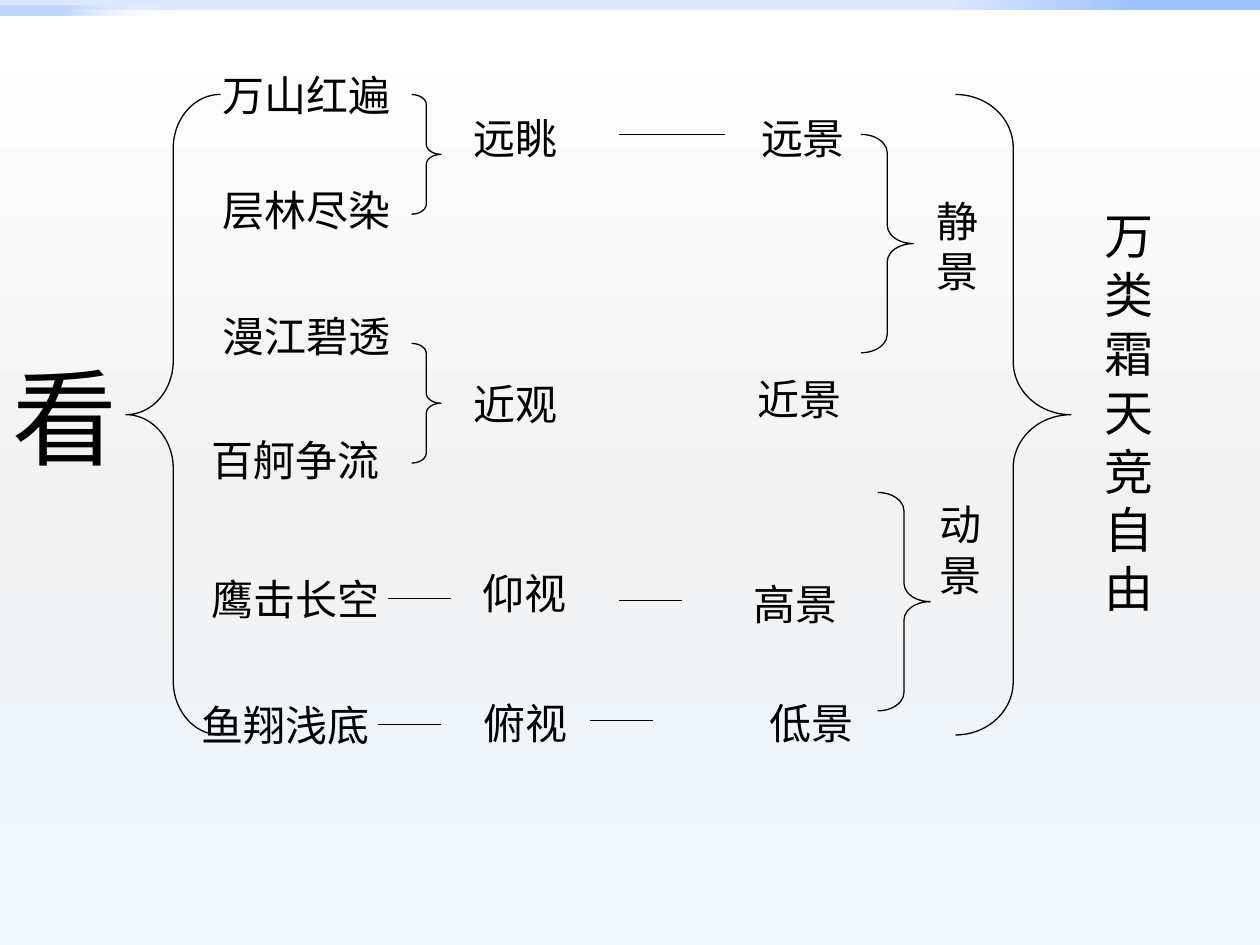
from lxml.etree import SubElement
from pptx import Presentation
from pptx.dml.color import RGBColor as RGB
from pptx.enum.shapes import MSO_CONNECTOR as Connector, MSO_SHAPE as Shape
from pptx.enum.text import MSO_ANCHOR as Anchor, MSO_AUTO_SIZE as AutoSize, PP_ALIGN as Align
from pptx.oxml import parse_xml
from pptx.oxml.ns import nsdecls, qn
from pptx.util import Inches, Pt

COLORS = {"ink": "000000", "white": "FFFFFF", "grey": "F2F2F2", "ice": "EEF9FF",
          "pale": "DCE8FF", "mist": "C0D6FF", "sky": "9EC2FF"}
CJK = "Noto Sans CJK SC"
LATIN = "Cambria"

deck = Presentation()
deck.slide_width, deck.slide_height = Inches(10), Inches(7.5)
CELL = deck.slide_width / 120
slide = deck.slides.add_slide(deck.slide_layouts[5])


def gradient(stops, angle):
    marks = "".join(
        f'<a:gs pos="{pos * 1000}"><a:srgbClr val="{COLORS[name]}">'
        f'<a:alpha val="{alpha * 1000}"/></a:srgbClr></a:gs>'
        for pos, name, alpha in stops)
    return parse_xml(f'<a:gradFill {nsdecls("a")} rotWithShape="1"><a:gsLst>{marks}</a:gsLst>'
                     f'<a:lin ang="{angle * 60000}" scaled="0"/></a:gradFill>')


def grid(*cells):
    return [round(cell * CELL) for cell in cells]


backdrop = slide.background.fill
backdrop.solid()
solid = slide.background._cSld.bg.bgPr.find(qn("a:solidFill"))
solid.getparent().replace(
    solid, gradient([(0, "white", 100), (55, "grey", 100), (100, "ice", 100)], 90))

bands = [
    ((0, 0, 120, 1), [(0, "pale", 100), (75, "pale", 100), (90, "sky", 100), (100, "sky", 100)]),
    ((0, 0.5, 60, 1), [(0, "mist", 100), (10, "mist", 100), (28, "white", 0), (100, "white", 0)]),
]
for place, stops in bands:
    band = slide.shapes.add_shape(Shape.RECTANGLE, *grid(*place))
    band.shadow.inherit = False
    band.line.fill.background()
    band.fill.solid()
    old_fill = band._element.spPr.find(qn("a:solidFill"))
    old_fill.getparent().replace(old_fill, gradient(stops, 0))

phrases = [("万山红遍", 20, 6), ("层林尽染", 20, 17), ("漫江碧透", 20, 29),
           ("百舸争流", 19, 40.8), ("鹰击长空", 19, 54), ("鱼翔浅底", 18, 66)]
views = [("远眺", 43.9, 10.1), ("近观", 43.9, 35.5), ("仰视", 44.8, 53.5), ("俯视", 44.9, 65.8)]
scenes = [("远景", 71.3, 10.1), ("近景", 71, 35), ("高景", 70.6, 54.5), ("低景", 72.1, 65.8)]
moods = [("静景", 88, 18), ("动景", 88.3, 46.9)]

labels = [("看", (0, 33, 13, 13.2), 60, CJK)]
for group, width, height, font_name in [(phrases, 22, 6, CJK), (views, 12, 6, LATIN),
                                        (scenes, 11, 6, LATIN), (moods, 7, 10.8, LATIN)]:
    labels += [(words, (left, top, width, height), 24, font_name) for words, left, top in group]
labels.append(("万类霜天竞自由", (104, 19, 8, 40.4), 28, CJK))

for words, place, size, font_name in labels:
    if words == "看":
        label = slide.shapes.title
        label.left, label.top, label.width, label.height = grid(*place)
    else:
        label = slide.shapes.add_textbox(*grid(*place))
    frame = label.text_frame
    frame_format = {"word_wrap": True, "auto_size": AutoSize.NONE, "vertical_anchor": Anchor.TOP}
    for attribute, value in frame_format.items():
        setattr(frame, attribute, value)
    paragraph = frame.paragraphs[0]
    paragraph.alignment = Align.LEFT
    run = paragraph.add_run()
    run.text = words
    for attribute, value in {"size": Pt(size), "name": font_name, "bold": False}.items():
        setattr(run.font, attribute, value)
    run.font.color.rgb = RGB.from_string(COLORS["ink"])
    SubElement(run._r.get_or_add_rPr(), qn("a:ea")).set("typeface", CJK)

braces = [
    (Shape.LEFT_BRACE, (12, 9, 9, 61), 0.57),
    (Shape.RIGHT_BRACE, (91, 9, 11, 61), 0.46),
    (Shape.RIGHT_BRACE, (39.2, 9, 2.8, 11.4), 0.34),
    (Shape.RIGHT_BRACE, (39.2, 32.7, 2.8, 11.4), 0.34),
    (Shape.RIGHT_BRACE, (82, 12.8, 5, 20.8), 0.35),
    (Shape.RIGHT_BRACE, (83.6, 46.9, 5, 20.8), 0.35),
]
strokes = []
for kind, place, curl in braces:
    brace = slide.shapes.add_shape(kind, *grid(*place))
    brace.shadow.inherit = False
    brace.fill.background()
    brace.adjustments[0] = curl
    strokes.append(brace)

dashes = [(37, 57, 6), (36, 69, 6), (59, 12.8, 10), (59, 57.2, 6), (56.2, 68.6, 6)]
for left, level, length in dashes:
    dash = slide.shapes.add_connector(Connector.STRAIGHT, *grid(left, level, left + length, level))
    SubElement(dash._element.spPr, qn("a:effectLst"))
    strokes.append(dash)

for stroke in strokes:
    stroke.line.width = Pt(0.75)
    stroke.line.color.rgb = RGB.from_string(COLORS["ink"])

deck.save("out.pptx")
